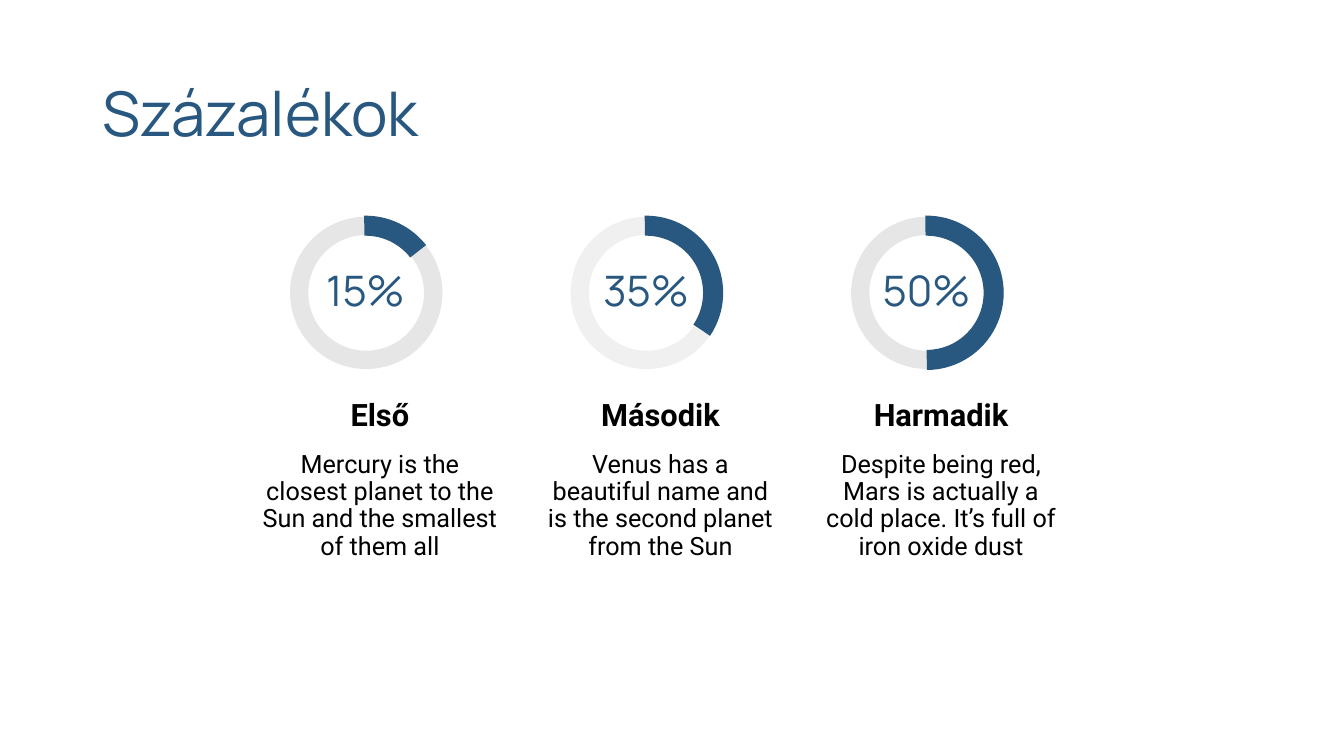
"""Builds a slide with three percentage rings, each with a heading and a description."""
from dataclasses import dataclass

from pptx import Presentation
from pptx import util as u
from pptx.dml.color import RGBColor
from pptx.enum import shapes, text

TITLE = "Százalékok"
STEPS = [
    {"share": "15%", "arc_end": 218.19, "track": "E7E6E6", "heading": "Első",
     "description": "Mercury is the closest planet to the Sun and the smallest of them all"},
    {"share": "35%", "arc_end": 146.15, "track": "F0F0F0", "heading": "Második",
     "description": "Venus has a beautiful name and is the second planet from the Sun"},
    {"share": "50%", "arc_end": 90.21, "track": "E7E6E6", "heading": "Harmadik",
     "description": "Despite being red, Mars is actually a cold place. It’s full of iron oxide dust"},
]


@dataclass(frozen=True)
class Theme:
    accent: str = "285780"
    ink: str = "000000"
    display: str = "Manrope"
    body: str = "Roboto"
    title_size: int = 44
    share_size: int = 30
    heading_size: int = 22
    description_size: int = 18


THEME = Theme()
FIRST_COLUMN, COLUMN_STEP, COLUMN_WIDTH = 6.35, 7.07, 6.45
RING_CENTER_Y = 7.38
TRACK_SIZE, ARC_SIZE = 3.84, 3.89
ARC_START = 270.95
DEGREE = 0.6


def write(frame, words, font, size, color, align, anchor, spacing=0.9, bold=False):
    frame.word_wrap = True
    frame.vertical_anchor = anchor
    paragraph = frame.paragraphs[0]
    paragraph.text = words
    paragraph.alignment = align
    paragraph.line_spacing = spacing
    paragraph.font.name = font
    paragraph.font.size = u.Pt(size)
    paragraph.font.bold = bold
    paragraph.font.color.rgb = RGBColor.from_string(color)


def add_label(slide, left, top, width, height, *style, **options):
    frame = slide.shapes.add_textbox(*map(u.Cm, (left, top, width, height))).text_frame
    frame.margin_left = frame.margin_right = u.Cm(0.25)
    frame.margin_top = frame.margin_bottom = u.Cm(0.25)
    write(frame, *style, text.PP_ALIGN.CENTER, **options)


def add_ring(slide, kind, center_x, size, color, adjustments):
    left, top = center_x - size / 2, RING_CENTER_Y - size / 2
    ring = slide.shapes.add_shape(kind, *map(u.Cm, (left, top, size, size)))
    ring.shadow.inherit = False
    ring.fill.solid()
    ring.fill.fore_color.rgb = RGBColor.from_string(color)
    ring.line.fill.background()
    for index, value in enumerate(adjustments):
        ring.adjustments[index] = value
    return ring


def add_step(slide, left, step):
    center = left + 2.86
    add_ring(slide, shapes.MSO_SHAPE.DONUT, center + 0.02, TRACK_SIZE, step["track"], [0.12])
    arc = add_ring(slide, shapes.MSO_SHAPE.BLOCK_ARC, center, ARC_SIZE, THEME.accent,
                   [step["arc_end"] * DEGREE, ARC_START * DEGREE, 0.13])
    arc.element.spPr.xfrm.set("flipH", "1")
    add_label(slide, center - 1.66, 6.81, 3.32, 1.12, step["share"], THEME.display,
              THEME.share_size, THEME.accent, anchor=text.MSO_ANCHOR.MIDDLE)
    add_label(slide, left, 9.75, COLUMN_WIDTH, 1.4, step["heading"], THEME.body,
              THEME.heading_size, THEME.ink, anchor=text.MSO_ANCHOR.BOTTOM,
              spacing=1.0, bold=True)
    add_label(slide, left, 11.13, COLUMN_WIDTH, 5.08, step["description"], THEME.body,
              THEME.description_size, THEME.ink, anchor=text.MSO_ANCHOR.TOP)


def main():
    deck = Presentation()
    deck.slide_width, deck.slide_height = u.Cm(33.87), u.Cm(19.05)
    slide = deck.slides.add_slide(deck.slide_layouts.get_by_name("Title Only"))
    title = slide.shapes.title
    title.left, title.top, title.width, title.height = map(u.Cm, (2.34, 1.09, 29.21, 3.68))
    write(title.text_frame, TITLE, THEME.display, THEME.title_size, THEME.accent,
          text.PP_ALIGN.LEFT, text.MSO_ANCHOR.MIDDLE)
    for index, step in enumerate(STEPS):
        add_step(slide, FIRST_COLUMN + index * COLUMN_STEP, step)
    deck.save("out.pptx")


if __name__ == "__main__":
    main()
